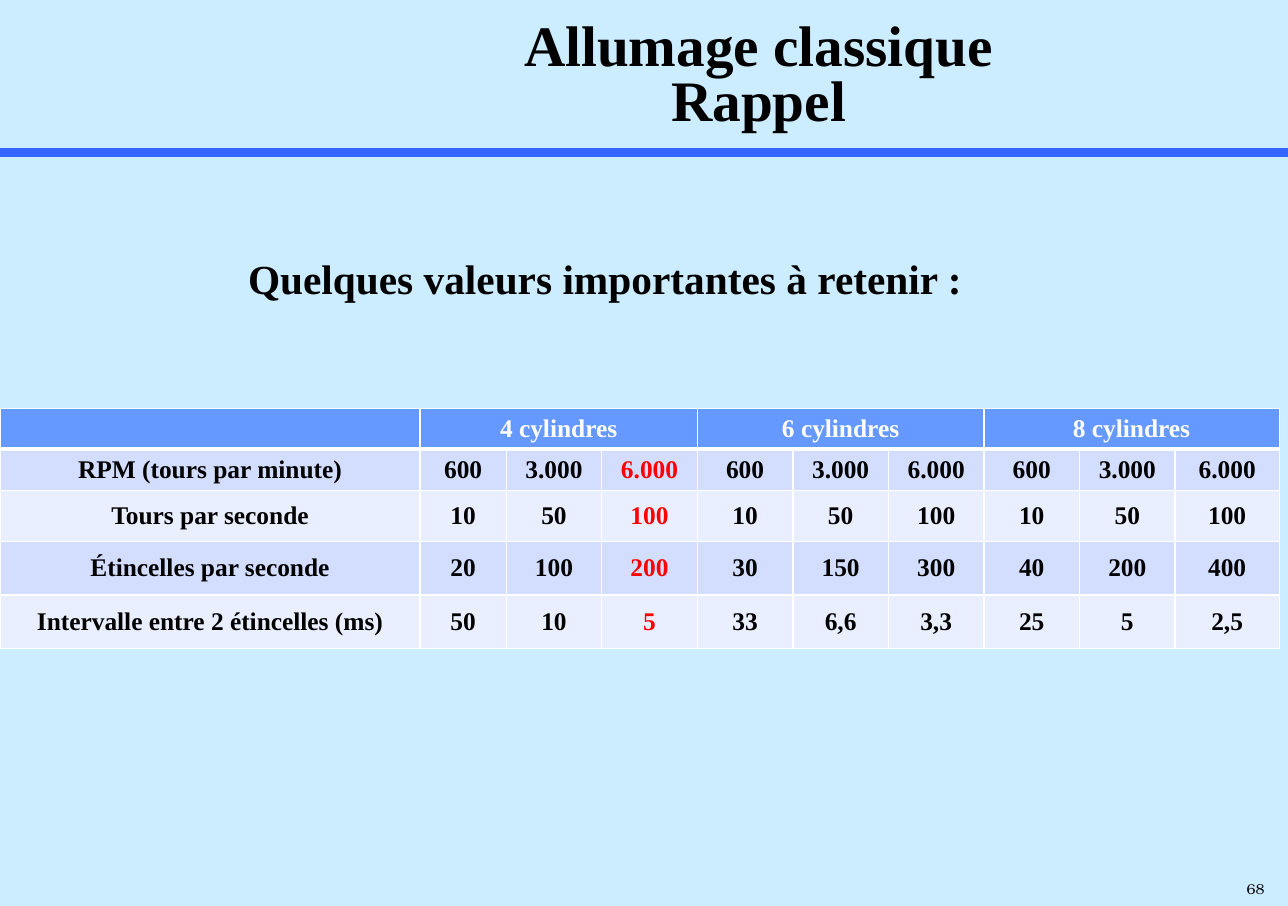
from copy import deepcopy
from dataclasses import dataclass

from pptx import Presentation
from pptx.dml.color import RGBColor
from pptx.enum.shapes import MSO_CONNECTOR
from pptx.enum.text import MSO_ANCHOR, MSO_AUTO_SIZE, PP_ALIGN
from pptx.oxml.ns import qn
from pptx.util import Cm, Pt
from lxml.etree import SubElement

TITLE = "Allumage classique\nRappel"
LEAD = "Quelques valeurs importantes à retenir :"
PAGE_NUMBER = "68"
ENGINES = ["4 cylindres", "6 cylindres", "8 cylindres"]
MEASURES = [
    ("RPM (tours par minute)", ["600", "3.000", "6.000"] * len(ENGINES)),
    ("Tours par seconde", ["10", "50", "100"] * len(ENGINES)),
    ("Étincelles par seconde", ["20", "100", "200", "30", "150", "300", "40", "200", "400"]),
    ("Intervalle entre 2 étincelles (ms)", ["50", "10", "5", "33", "6,6", "3,3", "25", "5", "2,5"]),
]
SPEEDS = 3
KEY_COLUMN = 3
COLUMN_WIDTHS = [9.32, 1.91] + [2.12] * 7 + [2.31]
ROW_HEIGHTS = [0.91, 0.91, 1.14, 1.19, 1.19]
CM_PER_POINT = 2.54 / 72
SLIDE_WIDTH, SLIDE_HEIGHT = 810 * CM_PER_POINT, 570 * CM_PER_POINT


@dataclass(frozen=True)
class Theme:
    font: str = "Times New Roman"
    number_font: str = "TeX Gyre Bonum"
    background: str = "CCECFF"
    rule: str = "3366FF"
    ink: str = "000000"
    key: str = "FF0000"
    white: str = "FFFFFF"
    header: str = "6699FF"
    bands: tuple = ("D3DEFF", "EAEFFF")
    title_size: float = 36
    lead_size: float = 26
    table_size: float = 16
    number_size: float = 9
    rule_width: float = 6
    grid_width: float = 1
    header_rule_width: float = 3


THEME = Theme()


def rgb(value):
    return RGBColor.from_string(value)


def write(frame, text, size, color=THEME.ink, font=THEME.font, bold=True,
          align=PP_ALIGN.CENTER, spacing=None):
    para = frame.paragraphs[0]
    para.alignment = align
    if spacing:
        para.line_spacing = spacing
    if not text:
        ending = para._p.get_or_add_endParaRPr()
        ending.set("sz", str(int(size * 100)))
        SubElement(ending, qn("a:latin"), typeface=font)
        return
    for index, line in enumerate(text.split("\n")):
        if index:
            para.add_line_break()
        span = para.add_run()
        span.text = line
        span.font.name = font
        span.font.size = Pt(size)
        span.font.bold = bold
        span.font.color.rgb = rgb(color)
    for line_break in para._p.findall(qn("a:br")):
        line_break.append(deepcopy(span._r.rPr))


def set_frame(box, anchor, wrap=True):
    frame = box.text_frame
    frame.auto_size = MSO_AUTO_SIZE.NONE
    frame.word_wrap = wrap
    frame.vertical_anchor = anchor
    frame.margin_left = frame.margin_right = Cm(0.28)
    frame.margin_top = frame.margin_bottom = Cm(0.13)
    return frame


def set_borders(cell, top, bottom):
    properties = cell._tc.get_or_add_tcPr()
    widths = {"L": THEME.grid_width, "R": THEME.grid_width, "T": top, "B": bottom}
    for side, width in widths.items():
        line = SubElement(properties, qn(f"a:ln{side}"), w=str(Pt(width)))
        fill = SubElement(line, qn("a:solidFill"))
        SubElement(fill, qn("a:srgbClr"), val=THEME.white)


def add_rule(page):
    rule = page.shapes.add_connector(MSO_CONNECTOR.STRAIGHT, 0, Cm(3.38), Cm(SLIDE_WIDTH), Cm(3.38))
    rule.line.color.rgb = rgb(THEME.rule)
    rule.line.width = Pt(THEME.rule_width)
    SubElement(rule._element.spPr, qn("a:effectLst"))


def add_values(page):
    header = [""]
    for engine in ENGINES:
        header += [engine] + [""] * (SPEEDS - 1)
    rows = [header] + [[label] + values for label, values in MEASURES]
    table = page.shapes.add_table(len(rows), len(header), 0, Cm(9.06), Cm(sum(COLUMN_WIDTHS)),
                                  Cm(sum(ROW_HEIGHTS))).table
    for column, width in zip(table.columns, COLUMN_WIDTHS):
        column.width = Cm(width)
    for row, height in zip(table.rows, ROW_HEIGHTS):
        row.height = Cm(height)
    for first in range(1, len(header), SPEEDS):
        table.cell(0, first).merge(table.cell(0, first + SPEEDS - 1))
    for r, row in enumerate(rows):
        top = THEME.header_rule_width if r == 1 else THEME.grid_width
        bottom = THEME.header_rule_width if r == 0 else THEME.grid_width
        for c, text in enumerate(row):
            cell = table.cell(r, c)
            set_borders(cell, top, bottom)
            cell.fill.solid()
            cell.fill.fore_color.rgb = rgb(THEME.bands[(r - 1) % 2] if r else THEME.header)
            cell.vertical_anchor = MSO_ANCHOR.MIDDLE
            color = THEME.white if r == 0 else THEME.key if c == KEY_COLUMN else THEME.ink
            write(cell.text_frame, text, THEME.table_size, color=color)


def main():
    deck = Presentation()
    deck.slide_width, deck.slide_height = Cm(SLIDE_WIDTH), Cm(SLIDE_HEIGHT)
    page = deck.slides.add_slide(deck.slide_layouts[5])
    page.background.fill.solid()
    page.background.fill.fore_color.rgb = rgb(THEME.background)

    add_rule(page)
    number = page.shapes.add_textbox(Cm(27.38), Cm(19.41), Cm(1.19), Cm(0.71))
    write(set_frame(number, MSO_ANCHOR.MIDDLE, wrap=False), PAGE_NUMBER, THEME.number_size,
          font=THEME.number_font, bold=False, align=PP_ALIGN.LEFT, spacing=0.75)
    lead = page.shapes.add_textbox(Cm(3.58), Cm(5.49), Cm(19.71), Cm(1.4))
    write(set_frame(lead, MSO_ANCHOR.TOP), LEAD, THEME.lead_size)

    title = page.shapes.title
    title.left, title.top, title.width, title.height = Cm(5.08), Cm(0.36), Cm(23.5), Cm(2.74)
    write(set_frame(title, MSO_ANCHOR.MIDDLE), TITLE, THEME.title_size, spacing=0.8)
    add_values(page)
    deck.save("out.pptx")


if __name__ == "__main__":
    main()
